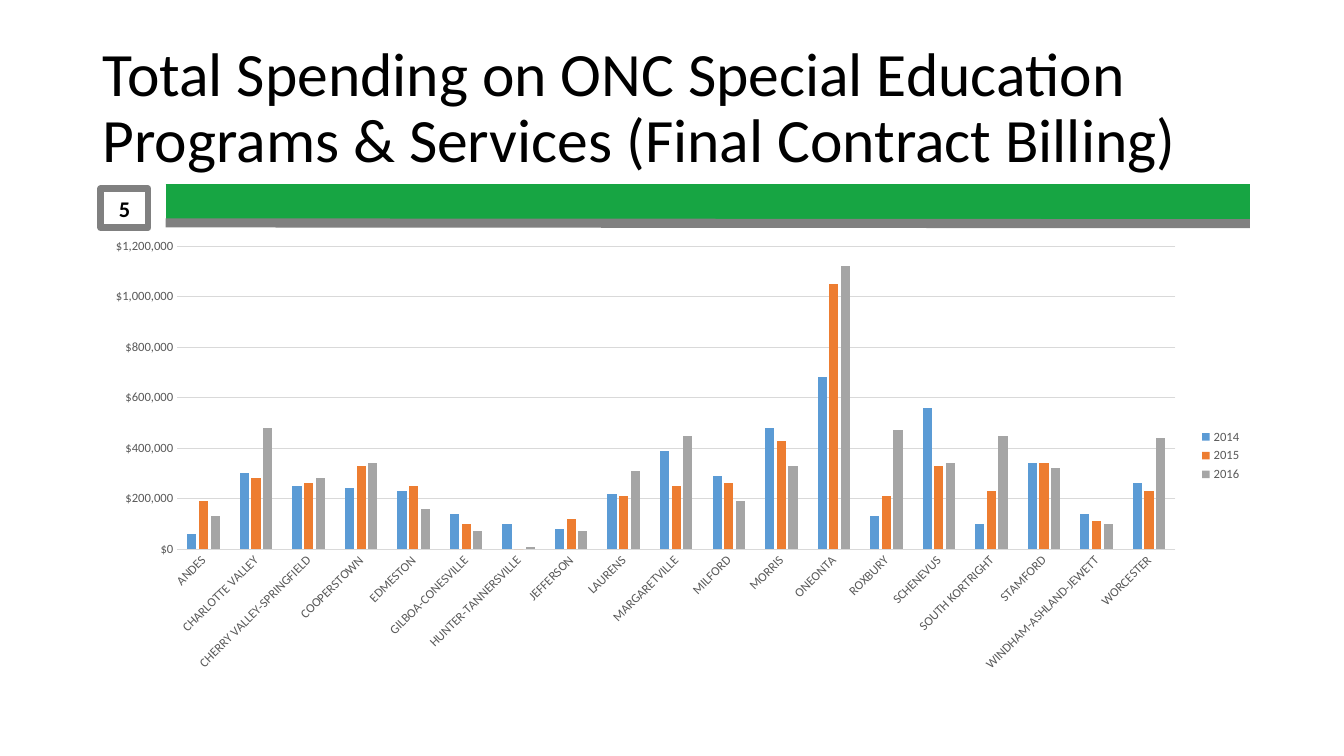
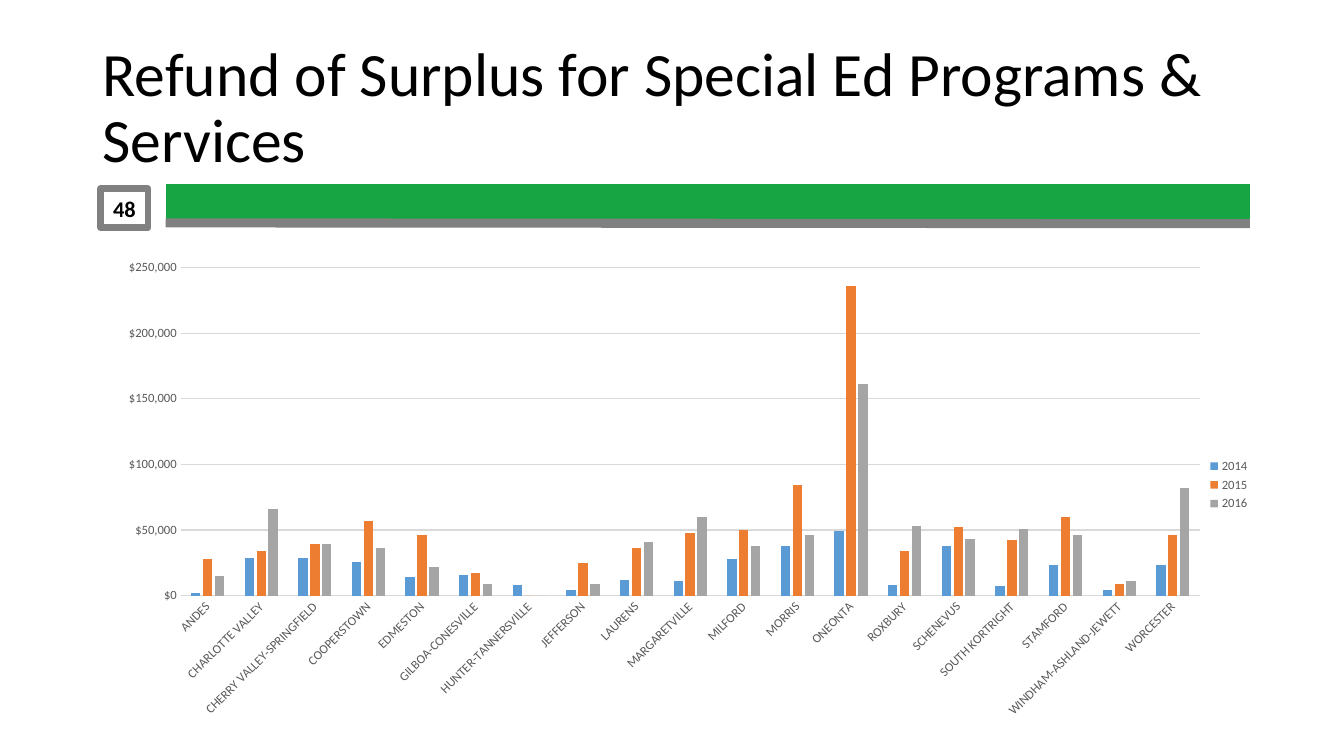
from lxml import etree
from pptx import Presentation, util as u
from pptx.chart.data import CategoryChartData
from pptx.dml.color import RGBColor
from pptx.enum import chart as ch, shapes, text
from pptx.oxml.ns import qn

Pt = u.Pt
FONT = "Calibri"
BLACK, GREEN, GRAY = "000000", "17A543", "808080"
LABEL, GRID = "595959", "D9D9D9"
YEAR_COLORS = {"2014": "5B9BD5", "2015": "ED7D31", "2016": "A5A5A5"}

DISTRICTS = [
    "ANDES", "CHARLOTTE VALLEY", "CHERRY VALLEY-SPRINGFIELD", "COOPERSTOWN",
    "EDMESTON", "GILBOA-CONESVILLE", "HUNTER-TANNERSVILLE", "JEFFERSON",
    "LAURENS", "MARGARETVILLE", "MILFORD", "MORRIS", "ONEONTA", "ROXBURY",
    "SCHENEVUS", "SOUTH KORTRIGHT", "STAMFORD", "WINDHAM-ASHLAND-JEWETT",
    "WORCESTER",
]

# Amounts are in thousands of dollars; plot areas are percentages of the chart.
SLIDES = [
    {
        "title": "Total Spending on ONC Special Education Programs & Services "
                 "(Final Contract Billing)",
        "number": "5",
        "chart_box": (66.2, 164.2, 828, 322.6),
        "plot_area": (7.3, 3.6, 86.1, 67.1),
        "top": 1200, "step": 200,
        "amounts": {
            "2014": [60, 300, 250, 240, 230, 140, 100, 80, 220, 390, 290, 480,
                     680, 130, 560, 100, 340, 140, 260],
            "2015": [190, 280, 260, 330, 250, 100, 0, 120, 210, 250, 260, 430,
                     1050, 210, 330, 230, 340, 110, 230],
            "2016": [130, 480, 280, 340, 160, 70, 10, 70, 310, 450, 190, 330,
                     1120, 470, 340, 450, 320, 100, 440],
        },
    },
    {
        "title": "Refund of Surplus for Special Ed Programs & Services",
        "number": "48",
        "chart_box": (72, 175, 828, 342.7),
        "plot_area": (6.9, 4.7, 87.9, 68.4),
        "top": 250, "step": 50,
        "amounts": {
            "2014": [2, 29, 29, 26, 14, 16, 8, 4, 12, 11, 28, 38, 49, 8, 38, 7,
                     23, 4, 23],
            "2015": [28, 34, 39, 57, 46, 17, 0, 25, 36, 48, 50, 84, 236, 34,
                     52, 42, 60, 9, 46],
            "2016": [15, 66, 39, 36, 22, 9, 0, 9, 41, 60, 38, 46, 161, 53, 43,
                     51, 46, 11, 82],
        },
    },
]


def rgb(color):
    return RGBColor.from_string(color)


def points(*lengths):
    return [Pt(length) for length in lengths]


def style_font(font, size, color, bold=False):
    font.name, font.size, font.bold = FONT, Pt(size), bold
    font.color.rgb = rgb(color)


def style_line(line, color, width):
    line.color.rgb = rgb(color)
    line.width = Pt(width)


def write(frame, words, size, bold=False):
    frame.word_wrap = True
    frame.vertical_anchor = text.MSO_ANCHOR.MIDDLE
    paragraph = frame.paragraphs[0]
    run = paragraph.add_run()
    run.text = words
    style_font(run.font, size, BLACK, bold)
    return paragraph


def add_title(slide, words):
    title = slide.shapes.add_textbox(*points(66.2, 26.1, 828, 104.4))
    write(title.text_frame, words, 44).line_spacing = 0.9


def add_band(slide, start_y, end_y, color, width):
    band = slide.shapes.add_connector(
        shapes.MSO_CONNECTOR.STRAIGHT, *points(118.3, start_y, 892.8, end_y))
    style_line(band.line, color, width)
    etree.SubElement(band.line._get_or_add_ln().getparent(), qn("a:effectLst"))


def add_number(slide, number):
    badge = slide.shapes.add_shape(
        shapes.MSO_SHAPE.RECTANGLE, *points(72, 134.8, 33.8, 28))
    badge.shadow.inherit = False
    badge.fill.background()
    style_line(badge.line, GRAY, 4.75)
    frame = badge.text_frame
    frame.margin_left = frame.margin_right = 0
    frame.margin_top = frame.margin_bottom = 0
    write(frame, number, 16, bold=True).alignment = text.PP_ALIGN.CENTER


def set_plot_area(chart, percentages):
    """Fix the inner plot area, given as left, top, width and height."""
    plot_area = chart._chartSpace.chart.plotArea
    for old in plot_area.findall(qn("c:layout")):
        plot_area.remove(old)
    layout = etree.Element(qn("c:layout"))
    manual = etree.SubElement(layout, qn("c:manualLayout"))
    settings = [("layoutTarget", "inner"), ("xMode", "edge"), ("yMode", "edge")]
    settings += [(side, f"{percent / 100:.3f}")
                 for side, percent in zip("xywh", percentages)]
    for tag, value in settings:
        etree.SubElement(manual, qn("c:" + tag)).set("val", value)
    plot_area.insert(0, layout)


def style_axes(chart, top, step):
    districts, dollars = chart.category_axis, chart.value_axis
    for axis in (districts, dollars):
        axis.major_tick_mark = axis.minor_tick_mark = ch.XL_TICK_MARK.NONE
        style_font(axis.tick_labels.font, 9, LABEL)
    style_line(districts.format.line, GRID, 0.75)
    slant = districts._element.find(qn("c:txPr")).find(qn("a:bodyPr"))
    slant.set("rot", str(-45 * 60000))
    slant.set("vert", "horz")

    dollars.minimum_scale, dollars.maximum_scale = 0, top * 1000
    dollars.major_unit = step * 1000
    dollars.tick_labels.number_format = '"$"#,##0'
    dollars.tick_labels.number_format_is_linked = False
    dollars.format.line.fill.background()
    style_line(dollars.major_gridlines.format.line, GRID, 0.75)


def add_spending_chart(slide, content):
    data = CategoryChartData(number_format='"$"#,##0')
    data.categories = DISTRICTS
    for year, thousands in content["amounts"].items():
        data.add_series(year, [amount * 1000 for amount in thousands])
    chart = slide.shapes.add_chart(
        ch.XL_CHART_TYPE.COLUMN_CLUSTERED, *points(*content["chart_box"]), data).chart
    style_font(chart.font, 10, BLACK)
    chart.has_title = False
    chart.has_legend = True
    chart.legend.position = ch.XL_LEGEND_POSITION.RIGHT
    chart.legend.include_in_layout = False
    style_font(chart.legend.font, 9, LABEL)

    columns = chart.plots[0]
    columns.gap_width, columns.overlap = 219, -27
    columns.vary_by_categories = False
    for year in columns.series:
        year.format.fill.solid()
        year.format.fill.fore_color.rgb = rgb(YEAR_COLORS[year.name])
    style_axes(chart, content["top"], content["step"])
    set_plot_area(chart, content["plot_area"])


def main():
    deck = Presentation()
    deck.slide_width, deck.slide_height = points(960, 540)
    for content in SLIDES:
        slide = deck.slides.add_slide(deck.slide_layouts[6])
        add_title(slide, content["title"])
        add_band(slide, 144.7, 144.7, GREEN, 26.25)
        add_number(slide, content["number"])
        add_band(slide, 159.2, 159.8, GRAY, 6.5)
        add_spending_chart(slide, content)
    deck.save("out.pptx")


if __name__ == "__main__":
    main()
